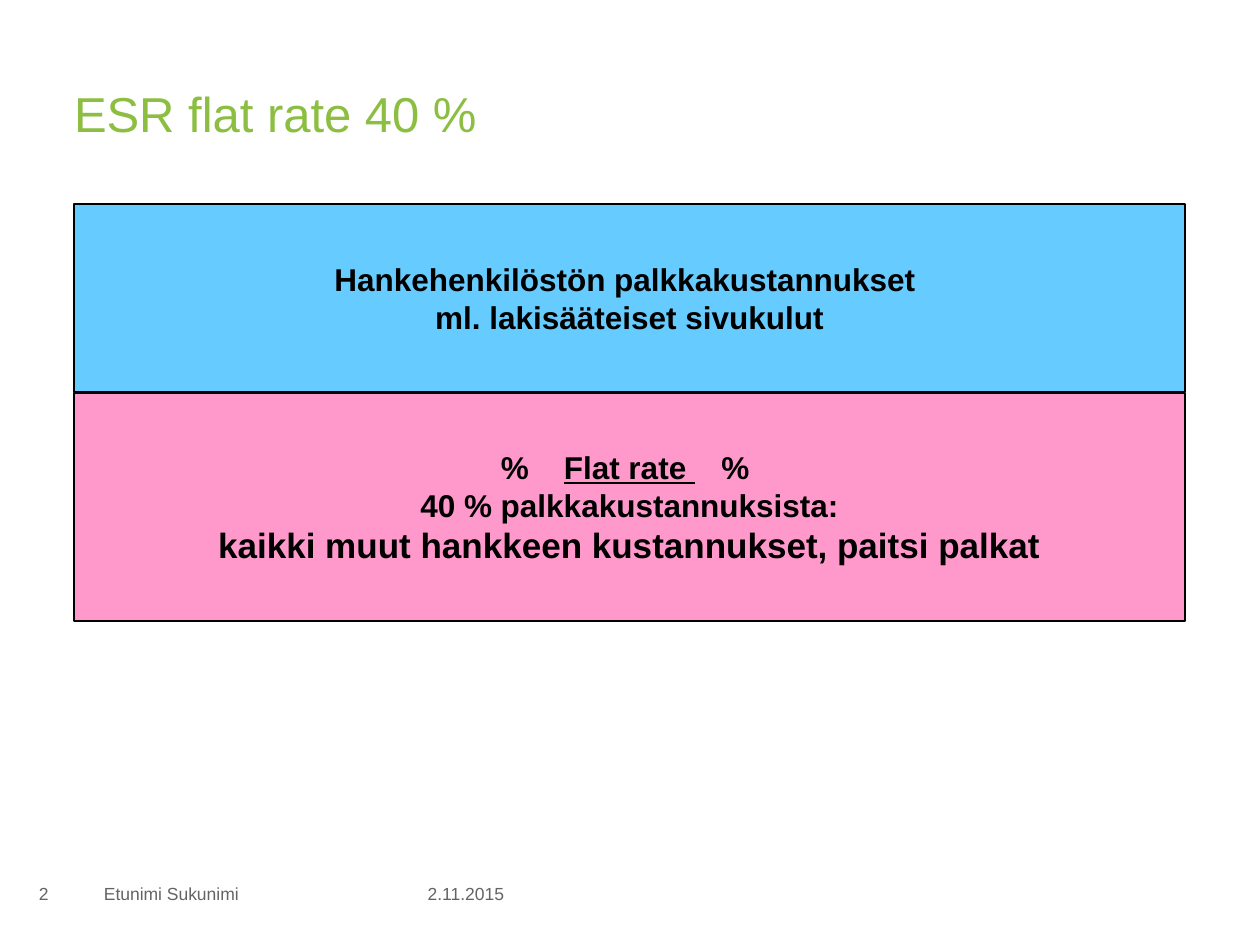
from dataclasses import dataclass

from pptx import Presentation
from pptx.dml.color import RGBColor
from pptx.enum.shapes import MSO_SHAPE
from pptx.enum.text import MSO_ANCHOR, MSO_AUTO_SIZE, PP_ALIGN
from pptx.util import Pt

PX = 7257  # EMU per px, 126 px to the inch


@dataclass(frozen=True)
class Theme:
    font: str = "Arial"
    green: str = "8CBE41"
    grey: str = "646464"
    black: str = "000000"
    blue: str = "66CCFF"
    pink: str = "FF99CC"
    title: int = 28
    large: int = 20
    body: int = 18
    small: int = 10


theme = Theme()


def write(shape, lines, size=theme.body, color=theme.black, bold=False,
          align=PP_ALIGN.LEFT, anchor=MSO_ANCHOR.MIDDLE, pads=(13, 6, 13, 6), wrap=False):
    """Fill a shape; each line is a list of (text, run options) pairs."""
    frame = shape.text_frame
    frame.auto_size = MSO_AUTO_SIZE.NONE
    frame.word_wrap = wrap
    frame.vertical_anchor = anchor
    (frame.margin_left, frame.margin_top,
     frame.margin_right, frame.margin_bottom) = [pad * PX for pad in pads]
    for i, line in enumerate(lines):
        para = frame.paragraphs[0] if i == 0 else frame.add_paragraph()
        para.alignment = align
        for text, style in line:
            run = para.add_run()
            run.text = text
            run.font.name = theme.font
            run.font.size = Pt(style.get("size", size))
            run.font.bold = bold
            run.font.underline = style.get("under", False)
            run.font.color.rgb = RGBColor.from_string(color)
            if "gap" in style:  # extra width in points
                run.font._element.set("spc", str(style["gap"] * 100))


deck = Presentation()
deck.slide_width, deck.slide_height = 1260 * PX, 945 * PX
slide = deck.slides.add_slide(deck.slide_layouts[5])
left, width = 74, 1111

# Title
title = slide.shapes.title
title.left, title.top, title.width, title.height = [n * PX for n in (left, 84, width, 124)]
write(title, [[("ESR flat rate 40 %", {})]], size=theme.title, color=theme.green,
      anchor=MSO_ANCHOR.TOP, pads=(0, 0, 0, 0), wrap=True)

# Footer
for text, x, wide, align, right in (
    ("2.11.2015", 368, 149, PP_ALIGN.RIGHT, 13),
    ("Etunimi Sukunimi", 91, 273, PP_ALIGN.LEFT, 0),
    ("2", 26, 59, PP_ALIGN.LEFT, 0),
):
    box = slide.shapes.add_textbox(x * PX, 869 * PX, wide * PX, 49 * PX)
    write(box, [[(text, {})]], size=theme.small, color=theme.grey,
          align=align, pads=(13, 6, right, 6))

# Cost blocks
wages = [
    [("Hankehenkilöstön palkkakustannukset ", {})],
    [("ml. lakisääteiset sivukulut", {})],
]
flat = [
    [("%", {}), (" ", {"gap": 15}), ("Flat rate ", {"under": True}),
     (" ", {"gap": 10}), ("% ", {})],
    [("40 % palkkakustannuksista:", {})],
    [("kaikki muut hankkeen kustannukset, paitsi palkat", {"size": theme.large})],
]
for lines, top, height, fill in ((wages, 204, 188, theme.blue), (flat, 393, 228, theme.pink)):
    block = slide.shapes.add_shape(MSO_SHAPE.RECTANGLE, left * PX, top * PX,
                                   width * PX, height * PX)
    block.shadow.inherit = False
    block.fill.solid()
    block.fill.fore_color.rgb = RGBColor.from_string(fill)
    block.line.color.rgb = RGBColor.from_string(theme.black)
    block.line.width = Pt(0.75)
    write(block, lines, bold=True, align=PP_ALIGN.CENTER)

deck.save("out.pptx")
